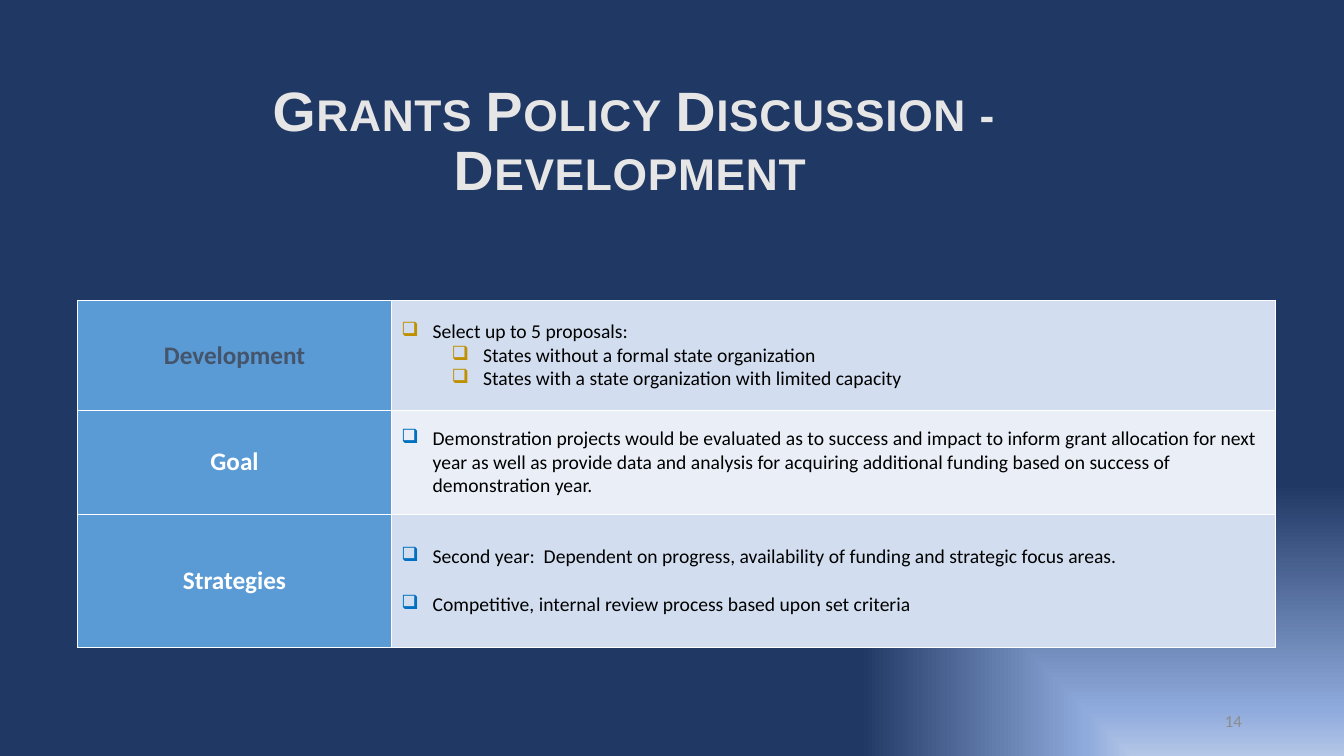
from lxml import etree
from pptx import Presentation
from pptx.dml.color import RGBColor
from pptx.enum.text import MSO_ANCHOR, MSO_AUTO_SIZE, PP_ALIGN
from pptx.oxml.ns import qn
from pptx.util import Cm, Pt

MIDDLE = MSO_ANCHOR.MIDDLE
CENTER, RIGHT = PP_ALIGN.CENTER, PP_ALIGN.RIGHT
NO_AUTOFIT = MSO_AUTO_SIZE.NONE

WHITE, BLACK = "FFFFFF", "000000"
NAVY, SLATE, GOLD, BLUE = "203864", "44546A", "BF9000", "0070C0"
LABEL_FILL = "5B9BD5"
BAND_FILLS = ["D2DEEF", "EAEFF7"]


def add_run(paragraph, text, size, color, bold=False, font="Calibri"):
    run = paragraph.add_run()
    run.text = text
    run.font.name = font
    run.font.size = Pt(size)
    run.font.bold = bold
    run.font.color.rgb = RGBColor.from_string(color)
    return run


def add_xml(parent, tag, **attributes):
    return etree.SubElement(parent, qn(tag), attributes)


prs = Presentation()
prs.slide_width, prs.slide_height = Cm(33.87), Cm(19.05)
slide = prs.slides.add_slide(prs.slide_layouts[5])

# Background: glow spreading from the bottom right corner
slide.background.fill.solid()
background = slide.element.find(".//" + qn("p:bgPr"))
background.remove(background.find(qn("a:solidFill")))
gradient = etree.Element(qn("a:gradFill"), rotWithShape="1")
background.insert(0, gradient)
stops = add_xml(gradient, "a:gsLst")
for percent, color in [(0, "B4C7E7"), (12, "8FAADC"), (72, NAVY), (83, NAVY), (100, NAVY)]:
    stop = add_xml(stops, "a:gs", pos=str(percent * 1000))
    add_xml(stop, "a:srgbClr", val=color)
glow = add_xml(gradient, "a:path", path="rect")
add_xml(glow, "a:fillToRect", l="100000", t="100000")

# Title
title = slide.shapes.title
title.left, title.top, title.width, title.height = Cm(3.2), Cm(2.54), Cm(25.55), Cm(2.13)
title.text_frame.auto_size = NO_AUTOFIT
title.text_frame.word_wrap = True
title.text_frame.vertical_anchor = MIDDLE
heading = title.text_frame.paragraphs[0]
heading.alignment = CENTER
heading.line_spacing = 0.9
heading_run = add_run(heading, "Grants Policy Discussion - Development", 39.6, "E7E6E6", True, "Arial")
heading_format = heading_run.font._element
heading_format.set("cap", "small")
heading_format.set("spc", "50")

# Page number
page_number = slide.shapes.add_textbox(Cm(23.93), Cm(17.65), Cm(7.62), Cm(1.02)).text_frame
page_number.word_wrap = True
page_number.vertical_anchor = MIDDLE
page_number.paragraphs[0].alignment = RIGHT
add_run(page_number.paragraphs[0], "14", 12, "8C8C8C")

# Table: label, label colour, row height, bullet colour, gap between items, items (level, text)
rows = [
    ("Development", SLATE, 2.77, GOLD, 0, [
        (0, "Select up to 5 proposals:"),
        (1, "States without a formal state organization"),
        (1, "States with a state organization with limited capacity"),
    ]),
    ("Goal", WHITE, 2.62, BLUE, 0, [
        (0, "Demonstration projects would be evaluated as to success and impact to inform "
            "grant allocation for next year as well as provide data and analysis for acquiring "
            "additional funding based on success of demonstration year."),
    ]),
    ("Strategies", WHITE, 3.35, BLUE, 17, [
        (0, "Second year:  Dependent on progress, availability of funding and strategic focus areas."),
        (0, "Competitive, internal review process based upon set criteria"),
    ]),
]
table = slide.shapes.add_table(len(rows), 2, Cm(1.96), Cm(7.57), Cm(30.18), Cm(8.74)).table
table.first_row = table.horz_banding = False
table.columns[0].width, table.columns[1].width = Cm(7.9), Cm(22.28)

for index, (label, label_color, height, bullet_color, gap, items) in enumerate(rows):
    table.rows[index].height = Cm(height)
    label_cell, items_cell = table.cell(index, 0), table.cell(index, 1)

    for cell, fill in [(label_cell, LABEL_FILL), (items_cell, BAND_FILLS[index % 2])]:
        cell.vertical_anchor = MIDDLE
        for side in ("a:lnL", "a:lnR", "a:lnT", "a:lnB"):
            border = add_xml(cell._tc.get_or_add_tcPr(), side, w=str(Pt(1)))
            add_xml(add_xml(border, "a:solidFill"), "a:srgbClr", val=WHITE)
        cell.fill.solid()
        cell.fill.fore_color.rgb = RGBColor.from_string(fill)

    label_paragraph = label_cell.text_frame.paragraphs[0]
    label_paragraph.alignment = CENTER
    add_run(label_paragraph, label, 18, label_color, True)

    for position, (level, text) in enumerate(items):
        frame = items_cell.text_frame
        item = frame.add_paragraph() if position else frame.paragraphs[0]
        item.level = level
        item.space_before = Pt(gap if position else 0)
        item_format = item._p.get_or_add_pPr()
        item_format.set("marL", str(Cm(0.79 + 1.27 * level)))
        item_format.set("indent", str(-Cm(0.79)))
        add_xml(add_xml(item_format, "a:buClr"), "a:srgbClr", val=bullet_color)
        add_xml(item_format, "a:buChar", char="❑")
        add_run(item, text, 14, BLACK)

prs.save("out.pptx")
